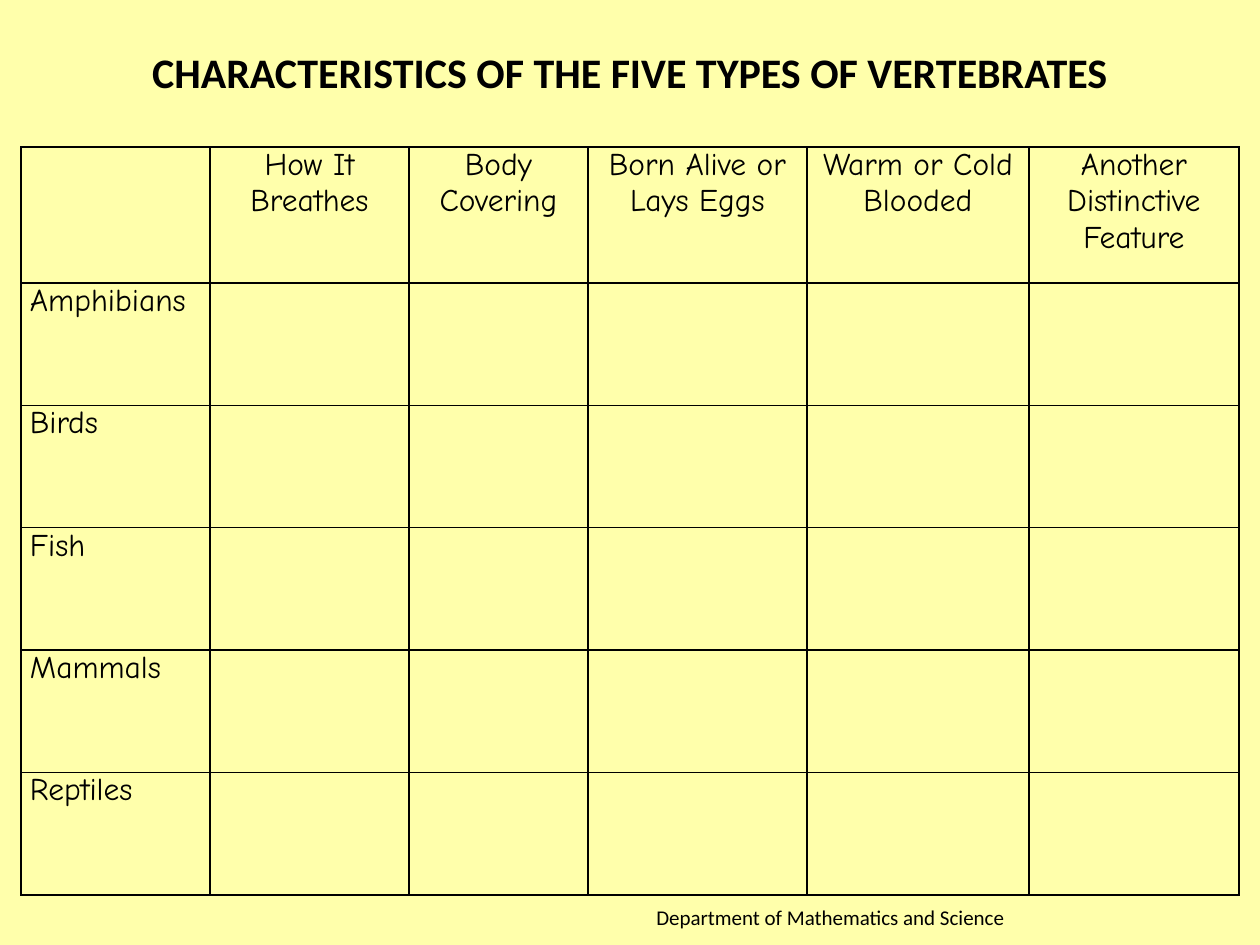
from lxml.etree import SubElement
from pptx import Presentation
from pptx.dml.color import RGBColor
from pptx.enum.text import MSO_ANCHOR, PP_ALIGN
from pptx.oxml.ns import qn
from pptx.util import Emu, Pt

BLACK = RGBColor(0, 0, 0)
PALE_YELLOW = RGBColor(0xFF, 0xFF, 0xAB)
PX_PER_INCH = 126

HEADINGS = [
    "",
    "How It Breathes",
    "Body Covering",
    "Born Alive or Lays Eggs",
    "Warm or Cold Blooded",
    "Another Distinctive\nFeature",
]
VERTEBRATES = ["Amphibians", "Birds", "Fish", "Mammals", "Reptiles"]
COLUMN_WIDTHS = [189, 199, 179, 219, 222, 210]
HEADING_HEIGHT = 136
BODY_HEIGHT = 612


def px(length):
    return Emu(round(length * 914400 / PX_PER_INCH))


def write_text(frame, text, font="Calibri", size=18, bold=False,
               align=PP_ALIGN.LEFT):
    """Fill a text frame, one paragraph for each line of text."""
    frame.word_wrap = True
    frame.text = text
    for paragraph in frame.paragraphs:
        paragraph.alignment = align
        paragraph.font.name = font
        paragraph.font.size = Pt(size)
        paragraph.font.bold = bold
        paragraph.font.color.rgb = BLACK


def set_borders(cell, color=BLACK, width=1):
    properties = cell._tc.get_or_add_tcPr()
    for position, side in enumerate(("a:lnL", "a:lnR", "a:lnT", "a:lnB")):
        line = SubElement(properties, qn(side), w=str(Pt(width)))
        fill = SubElement(line, qn("a:solidFill"))
        SubElement(fill, qn("a:srgbClr"), val=str(color))
        properties.remove(line)
        properties.insert(position, line)


def add_title(slide, text):
    title = slide.shapes.title
    title.left, title.top, title.width, title.height = map(px, (63, 38, 1134, 67))
    write_text(title.text_frame, text, size=24, bold=True, align=PP_ALIGN.CENTER)
    title.text_frame.vertical_anchor = MSO_ANCHOR.MIDDLE


def add_footer(slide, text):
    footer = slide.shapes.add_textbox(px(631), px(892), px(399), px(50))
    write_text(footer.text_frame, text, size=12, align=PP_ALIGN.CENTER)
    footer.text_frame.vertical_anchor = MSO_ANCHOR.MIDDLE


def format_cell(cell, text, align):
    cell.margin_left = cell.margin_right = px(9)
    cell.margin_top = cell.margin_bottom = 0
    write_text(cell.text_frame, text, font="Comic Neue", align=align)
    cell.fill.background()
    set_borders(cell)


def add_vertebrate_table(slide):
    rows = [HEADINGS]
    rows += [[name] + [""] * (len(HEADINGS) - 1) for name in VERTEBRATES]
    table = slide.shapes.add_table(
        len(rows), len(HEADINGS), px(21), px(147),
        px(sum(COLUMN_WIDTHS)), px(HEADING_HEIGHT + BODY_HEIGHT)).table
    table.first_row = table.horz_banding = False
    for column, width in zip(table.columns, COLUMN_WIDTHS):
        column.width = px(width)
    for index, texts in enumerate(rows):
        heading = index == 0
        table.rows[index].height = px(
            HEADING_HEIGHT if heading else BODY_HEIGHT / len(VERTEBRATES))
        align = PP_ALIGN.CENTER if heading else PP_ALIGN.LEFT
        for column, text in enumerate(texts):
            format_cell(table.cell(index, column), text, align)


def main():
    presentation = Presentation()
    presentation.slide_width = px(1260)
    presentation.slide_height = px(945)
    slide = presentation.slides.add_slide(presentation.slide_layouts[5])
    slide.background.fill.solid()
    slide.background.fill.fore_color.rgb = PALE_YELLOW
    add_footer(slide, "Department of Mathematics and Science")
    add_title(slide, "CHARACTERISTICS OF THE FIVE TYPES OF VERTEBRATES")
    add_vertebrate_table(slide)
    presentation.save("out.pptx")


if __name__ == "__main__":
    main()
